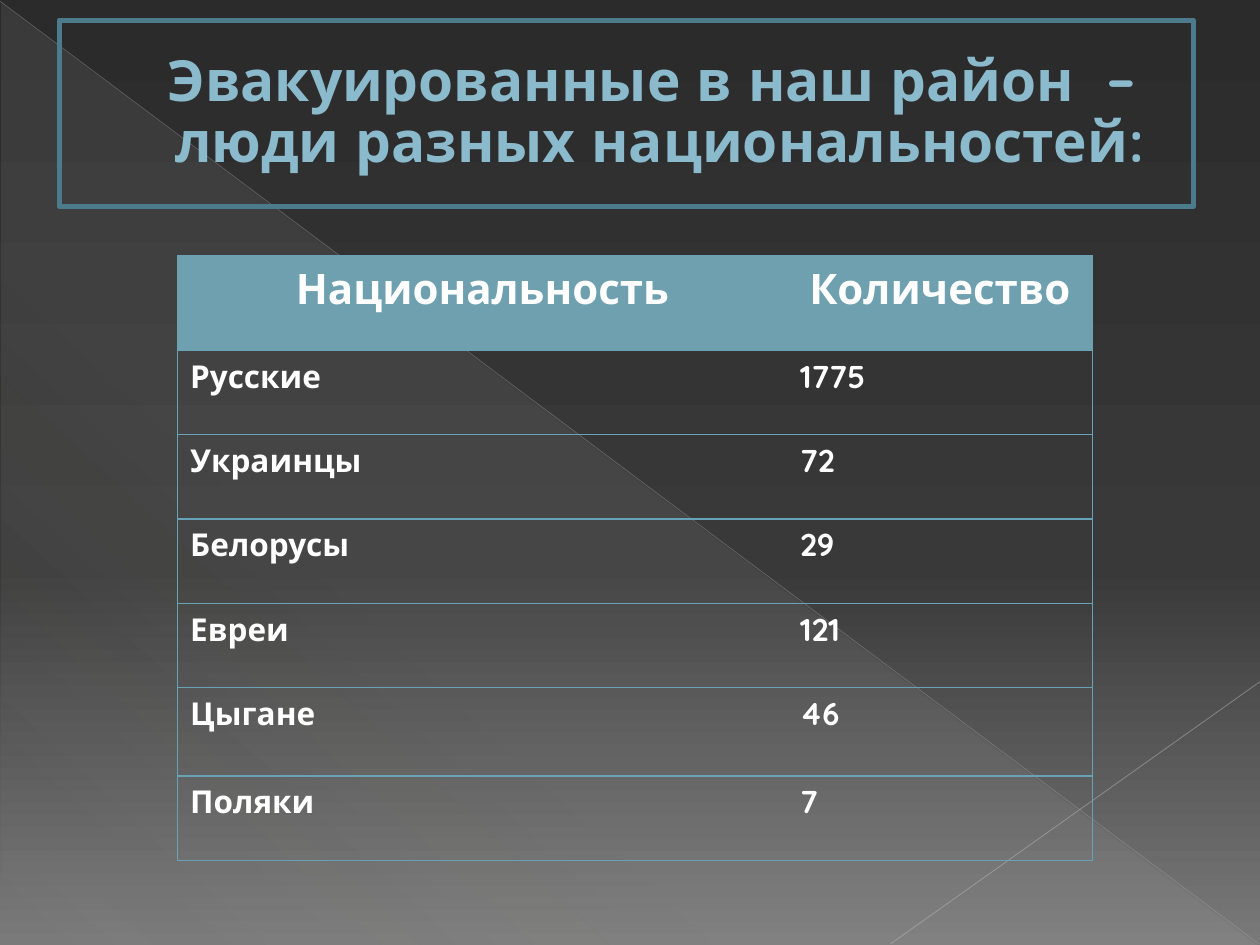
import pptx
import pptx.dml.color
import pptx.enum.dml
import pptx.enum.shapes
import pptx.enum.text
import pptx.oxml
import pptx.oxml.ns
import pptx.util
from pptx.util import Inches

RGBColor = pptx.dml.color.RGBColor
FONT = "Quicksand"
WHITE = RGBColor(0xFF, 0xFF, 0xFF)
TITLE_BLUE = RGBColor(0x8A, 0xBA, 0xCB)
TITLE_OUTLINE = RGBColor(0x4C, 0x6F, 0x7A)
FRAME_BLUE = RGBColor(0x4C, 0x7C, 0x8B)
HEADER_BLUE = RGBColor(0x6E, 0xA0, 0xB0)
BORDER_BLUE = RGBColor(0x67, 0xA3, 0xB7)
LONG_RAY = RGBColor(0xB7, 0xB7, 0xB7)
SHORT_RAY = RGBColor(0xBF, 0xBF, 0xBF)
SHEEN = RGBColor(0xD4, 0xD2, 0xD0)
# Gradient stops: position and opacity in percent
BACKGROUND_STOPS = [(0, RGBColor(0x2B, 0x2B, 0x2B), 100),
                    (60, RGBColor(0x39, 0x39, 0x39), 100),
                    (100, RGBColor(0x79, 0x79, 0x79), 100)]
SHEEN_STOPS = [(0, SHEEN, 10), (70, SHEEN, 8), (100, SHEEN, 1)]

TITLE = "Эвакуированные в наш район  –  люди разных национальностей:"
HEADERS = ("Национальность", "Количество")
COUNTS = [("Русские", "1775"), ("Украинцы", "72"), ("Белорусы", "29"),
          ("Евреи", "121"), ("Цыгане", "46"), ("Поляки", "7")]
COLUMN_WIDTHS = (4.84, 2.42)
ROW_HEIGHTS = (0.75, 0.67, 0.67, 0.67, 0.67, 0.7, 0.67)
NO_TABLE_STYLE = "{2D5ABB26-0587-4C30-8999-92F81FD0307C}"


def xml_element(markup):
    head, rest = markup.split(">", 1)
    return pptx.oxml.parse_xml(f"{head} {pptx.oxml.ns.nsdecls('a')}>{rest}")


def set_gradient(fill, stops, angle):
    fill.gradient()
    fill.gradient_angle = -angle % 360
    stop_list = fill._fill._gradFill.find(pptx.oxml.ns.qn("a:gsLst"))
    for stop in list(stop_list):
        stop_list.remove(stop)
    for position, color, opacity in stops:
        stop_list.append(xml_element(
            f'<a:gs pos="{position * 1000}"><a:srgbClr val="{color}">'
            f'<a:alpha val="{opacity * 1000}"/></a:srgbClr></a:gs>'))


def add_sheen(slide):
    triangle = slide.shapes.add_shape(
        pptx.enum.shapes.MSO_SHAPE.RIGHT_TRIANGLE,
        Inches(0.01), Inches(0.02), Inches(9.98), Inches(7.48))
    triangle.shadow.inherit = False
    triangle.line.fill.background()
    set_gradient(triangle.fill, SHEEN_STOPS, 133)


def add_ray(slide, start, end, color, width, opacity):
    ray = slide.shapes.add_connector(
        pptx.enum.shapes.MSO_CONNECTOR.STRAIGHT,
        *(Inches(value) for value in start + end))
    ray.line.color.rgb = color
    ray.line.width = pptx.util.Pt(width)
    properties = ray._element.spPr
    color_tag = next(properties.iter(pptx.oxml.ns.qn("a:srgbClr")))
    color_tag.append(xml_element(f'<a:alpha val="{opacity * 1000}"></a:alpha>'))
    properties.append(xml_element("<a:effectLst></a:effectLst>"))


def add_span(para, text, size, color):
    span = para.add_run()
    span.text = text
    span.font.name = FONT
    span.font.size = pptx.util.Pt(size)
    span.font.bold = True
    span.font.color.rgb = color
    return span


def fill_title(slide):
    box = slide.shapes.title
    box.left, box.top = Inches(0.47), Inches(0.16)
    box.width, box.height = Inches(9), Inches(1.48)
    box.line.color.rgb = FRAME_BLUE
    box.line.width = pptx.util.Pt(3)
    frame = box.text_frame
    frame.word_wrap = True
    frame.auto_size = pptx.enum.text.MSO_AUTO_SIZE.NONE
    frame.vertical_anchor = pptx.enum.text.MSO_ANCHOR.MIDDLE
    para = frame.paragraphs[0]
    para.alignment = pptx.enum.text.PP_ALIGN.CENTER
    para.line_spacing = 0.9
    para._p.get_or_add_pPr().set("marL", str(Inches(0.53)))
    span = add_span(para, TITLE, 32.4, TITLE_BLUE)
    span.font._element.insert(0, xml_element(
        f'<a:ln w="6350"><a:solidFill><a:srgbClr val="{TITLE_OUTLINE}"/>'
        "</a:solidFill></a:ln>"))
    # Bring the title in front of the backdrop
    slide.shapes._spTree.append(box._element)


def set_borders(cell, sides):
    properties = cell._tc.get_or_add_tcPr()
    for index, side in enumerate(sides):
        properties.insert(index, xml_element(
            f'<a:ln{side} w="9525"><a:solidFill><a:srgbClr val="{BORDER_BLUE}"/>'
            f"</a:solidFill></a:ln{side}>"))


def add_counts_table(slide):
    rows = [HEADERS] + COUNTS
    table = slide.shapes.add_table(
        len(rows), len(HEADERS), Inches(1.41), Inches(2.03),
        Inches(sum(COLUMN_WIDTHS)), Inches(sum(ROW_HEIGHTS))).table
    table.horz_banding = False
    style = next(table._tbl.iter(pptx.oxml.ns.qn("a:tableStyleId")))
    style.text = NO_TABLE_STYLE
    for column, width in zip(table.columns, COLUMN_WIDTHS):
        column.width = Inches(width)
    for row, height in zip(table.rows, ROW_HEIGHTS):
        row.height = Inches(height)
    for row_index, values in enumerate(rows):
        is_header = row_index == 0
        for column_index, value in enumerate(values):
            cell = table.cell(row_index, column_index)
            para = cell.text_frame.paragraphs[0]
            add_span(para, value, 24 if is_header else 18, WHITE)
            if is_header:
                para.alignment = pptx.enum.text.PP_ALIGN.CENTER
                cell.fill.solid()
                cell.fill.fore_color.rgb = HEADER_BLUE
            else:
                cell.fill.background()
            # Outer sides and row rules only, no rule between the columns
            set_borders(cell, ("L" if column_index == 0 else "R") + "TB")


def main():
    deck = pptx.Presentation()
    deck.slide_width, deck.slide_height = Inches(10), Inches(7.5)
    slide = deck.slides.add_slide(deck.slide_layouts.get_by_name("Title Only"))
    # Backdrop
    set_gradient(slide.background.fill, BACKGROUND_STOPS, 90)
    add_sheen(slide)
    add_ray(slide, (0, 0.01), (9.99, 7.49), LONG_RAY, 0.39, 35)
    add_ray(slide, (10, 5.41), (7.07, 7.49), SHORT_RAY, 0.47, 45)
    # Content
    fill_title(slide)
    add_counts_table(slide)
    deck.save("out.pptx")


if __name__ == "__main__":
    main()
